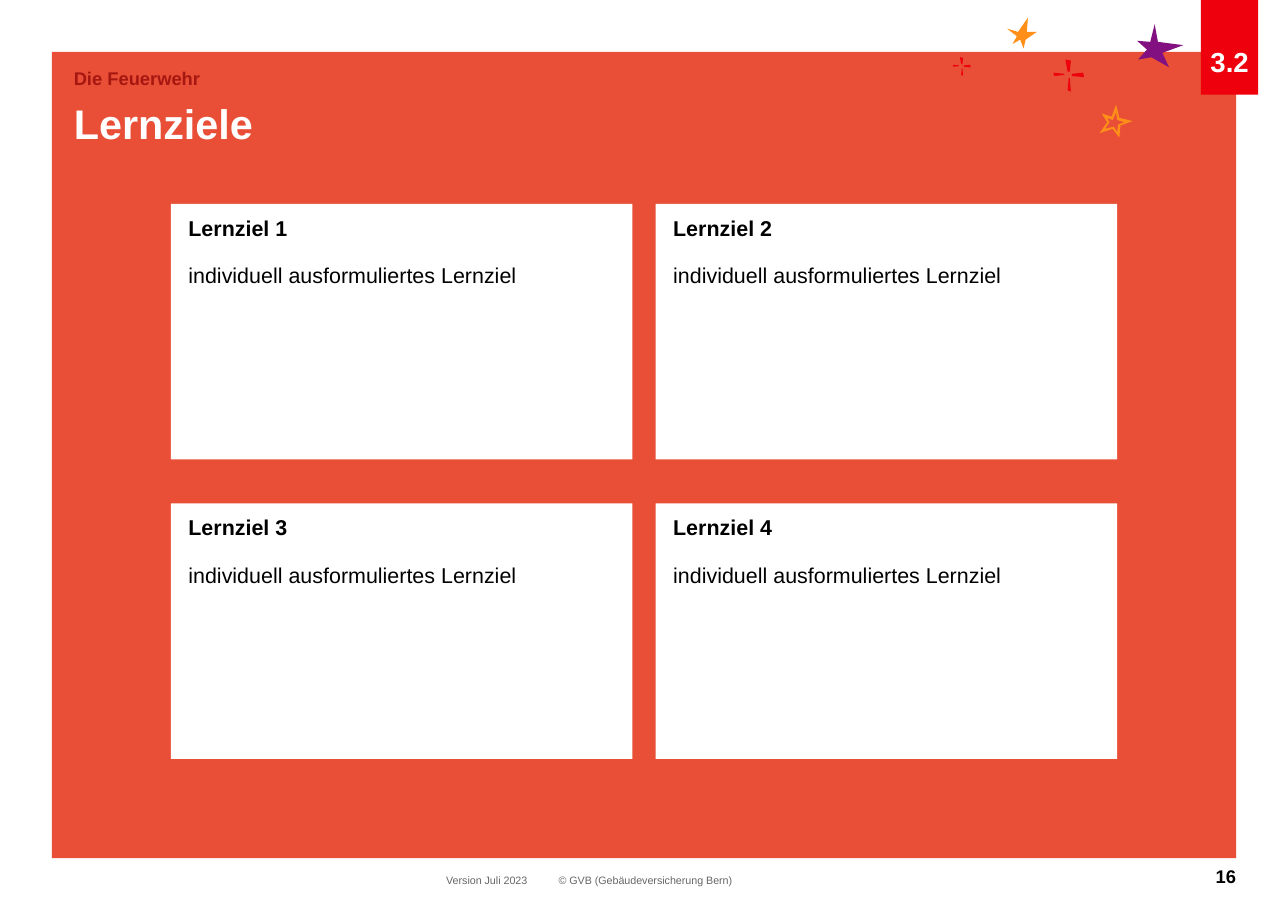
from dataclasses import dataclass

from lxml import etree
from pptx import Presentation
from pptx.dml.color import RGBColor
from pptx.enum.shapes import MSO_SHAPE
from pptx.enum.text import MSO_ANCHOR, MSO_AUTO_SIZE, PP_ALIGN
from pptx.oxml.ns import qn
from pptx.util import Inches, Pt

RECTANGLE = MSO_SHAPE.RECTANGLE
TOP, BOTTOM = MSO_ANCHOR.TOP, MSO_ANCHOR.BOTTOM
LEFT, CENTER, RIGHT = PP_ALIGN.LEFT, PP_ALIGN.CENTER, PP_ALIGN.RIGHT
NO_AUTOFIT = MSO_AUTO_SIZE.NONE

WHITE = RGBColor(0xFF, 0xFF, 0xFF)
BLACK = RGBColor(0x00, 0x00, 0x00)
GREY = RGBColor(0x66, 0x66, 0x66)
CORAL = RGBColor(0xE8, 0x4F, 0x36)
RED = RGBColor(0xEE, 0x00, 0x0C)
DARK_RED = RGBColor(0xA6, 0x17, 0x11)
PURPLE = RGBColor(0x83, 0x10, 0x80)
ORANGE = RGBColor(0xFF, 0x8F, 0x18)

Box = tuple[float, float, float, float]
Contour = list[tuple[float, float]]


@dataclass
class Label:
    text: str
    box: Box
    size: int
    color: RGBColor
    bold: bool = True
    align: PP_ALIGN = LEFT
    line_spacing: float = 1.0


@dataclass
class Ornament:
    color: RGBColor
    contours: list[Contour]


# Texts
SECTION = Label("Die Feuerwehr", (0.67, 0.65, 8.07, 0.2), 12, DARK_RED, line_spacing=0.8)
TITLE = Label("Lernziele", (0.67, 0.85, 8.07, 0.58), 27, WHITE)
CHAPTER = Label("3.2", (10.9, 0, 0.52, 0.86), 18, WHITE, align=CENTER)
FOOTER = [
    Label("Version Juli 2023", (4.05, 7.93, 0.85, 0.13), 7, GREY, bold=False),
    Label("© GVB (Gebäudeversicherung Bern)", (5.07, 7.93, 1.62, 0.12), 7, GREY, bold=False),
    Label("16", (10.51, 7.85, 0.71, 0.17), 12, BLACK, align=RIGHT),
]

# Grid of learning goals
GOAL_COUNT, COLUMNS = 4, 2
GRID_LEFT, GRID_TOP = 1.55, 1.85
CARD_WIDTH, CARD_HEIGHT = 4.19, 2.32
COLUMN_STEP, ROW_STEP = 4.4, 2.72

# Arms of a sparkle around its centre
SPARKLE_ARMS = [
    [(-0.01, -0.03), (-0.03, -0.14), (0.02, -0.13), (0.01, -0.03)],
    [(0.01, 0.03), (0.02, 0.15), (-0.01, 0.14), (0, 0.03)],
    [(0.03, -0.01), (0.13, -0.02), (0.14, 0.02), (0.03, 0.01)],
    [(-0.04, 0), (-0.13, 0.01), (-0.14, -0.02), (-0.04, -0.01)],
]


def sparkle(x: float, y: float, scale: float) -> list[Contour]:
    return [[(x + scale * dx, y + scale * dy) for dx, dy in arm] for arm in SPARKLE_ARMS]


ORNAMENTS = [
    Ornament(PURPLE, [[
        (10.44, 0.38), (10.32, 0.37), (10.41, 0.45), (10.33, 0.54), (10.45, 0.52),
        (10.61, 0.61), (10.55, 0.48), (10.74, 0.41), (10.51, 0.38), (10.48, 0.22)]]),
    Ornament(RED, sparkle(9.7, 0.68, 1)),
    Ornament(ORANGE, [[
        (9.19, 0.4), (9.26, 0.36), (9.29, 0.44), (9.31, 0.36), (9.41, 0.29),
        (9.32, 0.29), (9.33, 0.16), (9.24, 0.29), (9.14, 0.26), (9.23, 0.33)]]),
    Ornament(RED, sparkle(8.73, 0.6, 0.58)),
    Ornament(ORANGE, [
        [(10.16, 1.25), (10.1, 1.17), (9.98, 1.21), (10.05, 1.11), (10, 1.03),
         (10.09, 1.06), (10.13, 0.95), (10.16, 1.07), (10.28, 1.1), (10.17, 1.14)],
        [(10.11, 1.15), (10.14, 1.2), (10.15, 1.13), (10.21, 1.11), (10.14, 1.09),
         (10.13, 1.02), (10.1, 1.09), (10.05, 1.07), (10.07, 1.11), (10.03, 1.17)]]),
]


def apply(target, values: dict) -> None:
    for name, value in values.items():
        setattr(target, name, value)


def place(shape, box: Box) -> None:
    apply(shape, dict(zip(("left", "top", "width", "height"), map(Inches, box))))


def paint(shape, color: RGBColor) -> None:
    shape.fill.solid()
    shape.fill.fore_color.rgb = color
    shape.line.fill.background()


def set_frame(frame, insets: Box = (0, 0, 0, 0), anchor: MSO_ANCHOR = TOP) -> None:
    apply(frame, {"word_wrap": True, "auto_size": NO_AUTOFIT, "vertical_anchor": anchor})
    sides = ("margin_left", "margin_top", "margin_right", "margin_bottom")
    apply(frame, dict(zip(sides, map(Inches, insets))))


def write(paragraph, text: str, size: int, color: RGBColor, bold: bool,
          align: PP_ALIGN = LEFT, before: int = 0, line_spacing: float = 1.0) -> None:
    apply(paragraph, {"alignment": align, "space_before": Pt(before),
                      "space_after": Pt(0), "line_spacing": line_spacing})
    run = paragraph.add_run()
    run.text = text
    apply(run.font, {"name": "Arial", "size": Pt(size), "bold": bold})
    run.font.color.rgb = color


def write_label(shape, label: Label, insets: Box = (0, 0, 0, 0),
                anchor: MSO_ANCHOR = TOP) -> None:
    set_frame(shape.text_frame, insets, anchor)
    write(shape.text_frame.paragraphs[0], label.text, label.size, label.color,
          label.bold, label.align, line_spacing=label.line_spacing)


def add_block(slide, box: Box, color: RGBColor):
    block = slide.shapes.add_shape(RECTANGLE, *map(Inches, box))
    block.shadow.inherit = False
    paint(block, color)
    return block


def add_label(slide, label: Label) -> None:
    write_label(slide.shapes.add_textbox(*map(Inches, label.box)), label)


def add_ornament(slide, ornament: Ornament) -> None:
    contours = [[(Inches(x), Inches(y)) for x, y in contour] for contour in ornament.contours]
    builder = slide.shapes.build_freeform(*contours[0][0])
    for number, contour in enumerate(contours):
        if number:
            builder.move_to(*contour[0])
        builder.add_line_segments(contour[1:], close=True)
    outline = builder.convert_to_shape()
    outline.shadow.inherit = False
    paint(outline, ornament.color)


def bring_to_front(shape) -> None:
    shape.element.getparent().append(shape.element)


def remove_bullet(paragraph) -> None:
    properties = paragraph._p.get_or_add_pPr()
    properties.set("marL", "0")
    properties.set("indent", "0")
    etree.SubElement(properties, qn("a:buNone"))


def fill_goal(card, number: int) -> None:
    row, column = divmod(number - 1, COLUMNS)
    place(card, (GRID_LEFT + column * COLUMN_STEP, GRID_TOP + row * ROW_STEP,
                 CARD_WIDTH, CARD_HEIGHT))
    paint(card, WHITE)
    frame = card.text_frame
    set_frame(frame, (0.16, 0.1, 0.16, 0.1))
    heading, goal = frame.paragraphs[0], frame.add_paragraph()
    for paragraph in (heading, goal):
        remove_bullet(paragraph)
    write(heading, f"Lernziel {number}", 14, BLACK, True)
    write(goal, "individuell ausformuliertes Lernziel", 14, BLACK, False, before=14)
    bring_to_front(card)


def main() -> None:
    presentation = Presentation()
    apply(presentation, {"slide_width": Inches(11.69), "slide_height": Inches(8.27)})
    slide = presentation.slides.add_slide(presentation.slide_layouts.get_by_name("Comparison"))
    title, *goals = slide.placeholders

    # Background and ornaments
    add_block(slide, (0.47, 0.47, 10.75, 7.32), CORAL)
    for ornament in ORNAMENTS:
        add_ornament(slide, ornament)

    # Heading
    chapter = add_block(slide, CHAPTER.box, RED)
    write_label(chapter, CHAPTER, (0, 0.4, 0, 0.15), BOTTOM)
    add_label(slide, SECTION)
    place(title, TITLE.box)
    write_label(title, TITLE, (0, 0.04, 0, 0))
    bring_to_front(title)

    # Learning goals
    for number, card in enumerate(goals[:GOAL_COUNT], start=1):
        fill_goal(card, number)

    # Footer
    for label in FOOTER:
        add_label(slide, label)

    presentation.save("out.pptx")


if __name__ == "__main__":
    main()
